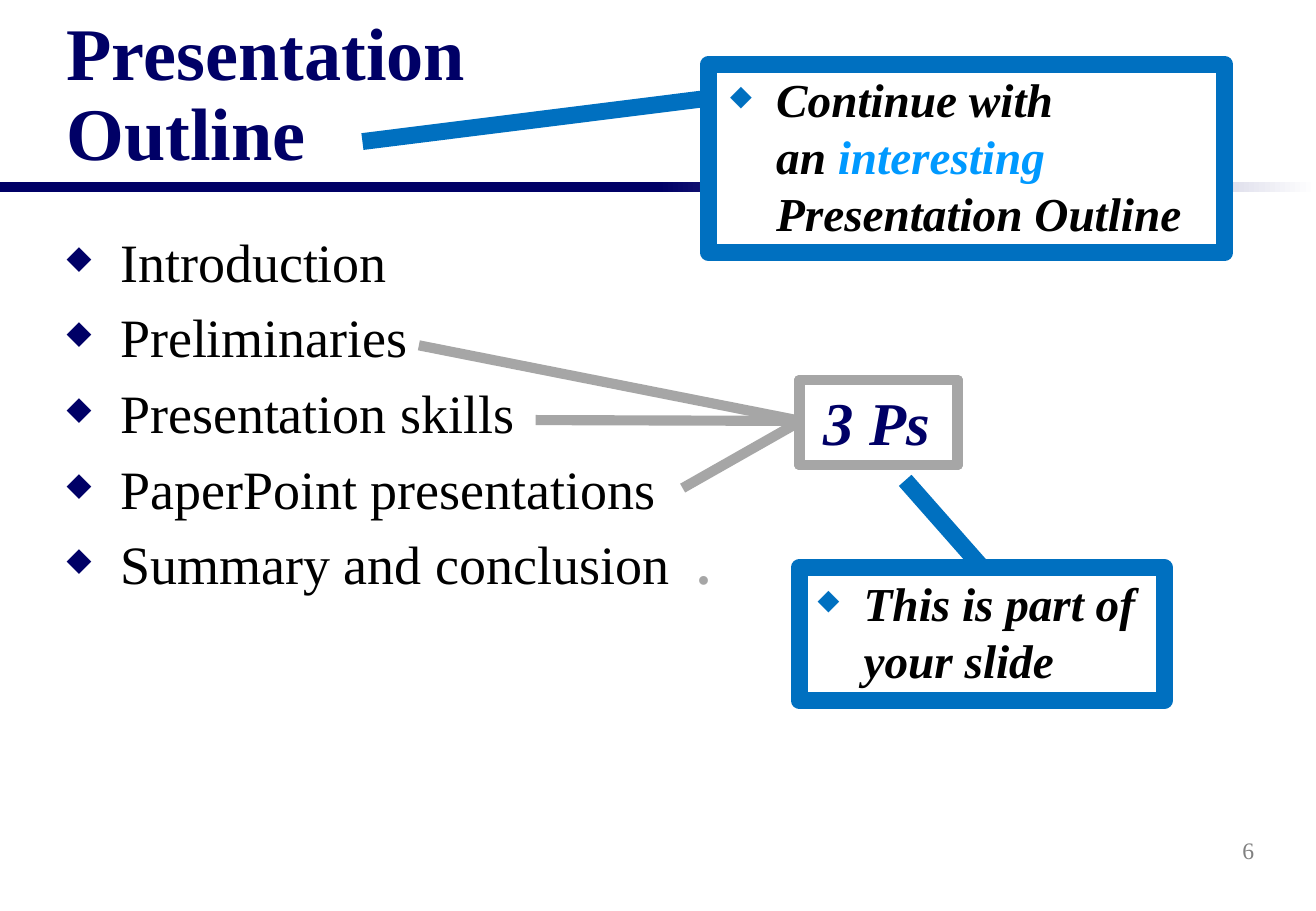
from typing import NamedTuple

from lxml import etree
from pptx import Presentation, util as u
from pptx.dml.color import RGBColor
from pptx.enum import shapes, text
from pptx.oxml import ns

PX = 9144  # EMU in one px, 100 px to the inch
FONT = "Times New Roman"
NAVY, BLUE, GREY = "000066", "0070C0", "A6A6A6"
BLACK, WHITE, SKY, NUMBER_GREY = "000000", "FFFFFF", "0099FF", "808080"


class Box(NamedTuple):
    left: int
    top: int
    width: int
    height: int


class Run(NamedTuple):
    text: str
    color: str = BLACK
    bold: bool = False


class Bullet(NamedTuple):
    color: str
    indent: int


class Callout(NamedTuple):
    box: Box
    color: str
    weight: int
    start: tuple[float, float]  # y, x as shares of the box
    end: tuple[float, float]


class Note(NamedTuple):
    callout: Callout
    box: Box
    runs: list[Run]


OUTLINE = [
    [Run("Introduction")],
    [Run("Preliminaries")],
    [Run("Presentation skills")],
    [Run("PaperPoint presentations")],
    [Run("Summary and conclusion\u00a0 "), Run(".", GREY, True)],
]
THREE_PS = Box(658, 313, 130, 70)
THREE_PS_ENDS = [(1.27, -0.74), (-0.41, -2.41), (0.47, -1.67)]
NOTES = [
    Note(
        Callout(Box(583, 53, 425, 155), BLUE, 10, (0.18, 0), (0.41, -0.67)),
        Box(591, 53, 420, 151),
        [
            Run("Continue with\nan ", BLACK, True),
            Run("interesting", SKY, True),
            Run(" Presentation Outline", BLACK, True),
        ],
    ),
    Note(
        Callout(Box(658, 467, 300, 110), BLUE, 10, (0, 0.5), (-0.65, 0.29)),
        Box(663, 468, 290, 104),
        [Run("This is part of\nyour slide", BLACK, True)],
    ),
]


def rgb(color: str) -> RGBColor:
    return RGBColor.from_string(color)


def emu(box: Box) -> list[int]:
    return [length * PX for length in box]


def add_bar(slide, box: Box, color: str, fade_to: str | None = None) -> None:
    bar = slide.shapes.add_shape(shapes.MSO_SHAPE.RECTANGLE, *emu(box))
    bar.shadow.inherit = False
    bar.line.fill.background()
    if fade_to is None:
        bar.fill.solid()
        bar.fill.fore_color.rgb = rgb(color)
        return
    bar.fill.gradient()
    bar.fill.gradient_angle = 0
    for stop, stop_color in zip(bar.fill.gradient_stops, (color, fade_to)):
        stop.color.rgb = rgb(stop_color)


def add_callout(slide, callout: Callout) -> None:
    shape = slide.shapes.add_shape(
        shapes.MSO_SHAPE.LINE_CALLOUT_1, *emu(callout.box)
    )
    shape.shadow.inherit = False
    for index, value in enumerate(callout.start + callout.end):
        shape.adjustments[index] = value
    shape.fill.solid()
    shape.fill.fore_color.rgb = rgb(WHITE)
    shape.line.color.rgb = rgb(callout.color)
    shape.line.width = u.Pt(callout.weight)


def set_bullet(paragraph, bullet: Bullet) -> None:
    properties = paragraph._p.get_or_add_pPr()
    properties.set("marL", str(bullet.indent * PX))
    properties.set("indent", str(-bullet.indent * PX))
    color = etree.SubElement(properties, ns.qn("a:buClr"))
    etree.SubElement(color, ns.qn("a:srgbClr"), val=bullet.color)
    etree.SubElement(properties, ns.qn("a:buSzPct"), val="60000")
    etree.SubElement(properties, ns.qn("a:buChar"), char="◆")


def add_text(
    slide,
    box: Box,
    paragraphs: list[list[Run]],
    *,
    size: int,
    italic: bool = False,
    bullet: Bullet | None = None,
    align: text.PP_ALIGN = text.PP_ALIGN.LEFT,
    anchor: text.MSO_ANCHOR = text.MSO_ANCHOR.TOP,
    line_spacing: float | None = None,
) -> None:
    """Write one paragraph per list of runs; a newline in a run breaks the line."""
    frame = slide.shapes.add_textbox(*emu(box)).text_frame
    frame.word_wrap = True
    frame.vertical_anchor = anchor
    for index, runs in enumerate(paragraphs):
        paragraph = frame.add_paragraph() if index else frame.paragraphs[0]
        paragraph.alignment = align
        if line_spacing:
            paragraph.line_spacing = line_spacing
        if bullet:
            paragraph.space_before = u.Pt(size * 0.2)
            set_bullet(paragraph, bullet)
        for item in runs:
            for number, line in enumerate(item.text.split("\n")):
                if number:
                    paragraph.add_line_break()
                run = paragraph.add_run()
                run.text = line
                run.font.name = FONT
                run.font.size = u.Pt(size)
                run.font.bold = item.bold
                run.font.italic = italic
                run.font.color.rgb = rgb(item.color)


def main() -> None:
    presentation = Presentation()
    presentation.slide_width = 1083 * PX
    presentation.slide_height = 750 * PX
    slide = presentation.slides.add_slide(presentation.slide_layouts[6])

    add_bar(slide, Box(0, 150, 542, 8), NAVY)
    add_bar(slide, Box(541, 150, 542, 8), NAVY, fade_to=WHITE)
    add_text(slide, Box(816, 675, 226, 50), [[Run("6", NUMBER_GREY)]], size=14,
             align=text.PP_ALIGN.RIGHT, anchor=text.MSO_ANCHOR.MIDDLE)
    add_text(slide, Box(45, 29, 988, 121),
             [[Run("Presentation\nOutline", NAVY, True)]], size=44,
             anchor=text.MSO_ANCHOR.BOTTOM, line_spacing=0.9)
    add_text(slide, Box(45, 183, 996, 58), OUTLINE, size=32,
             bullet=Bullet(NAVY, 44))

    for end in THREE_PS_ENDS:
        add_callout(slide, Callout(THREE_PS, GREY, 6, (0.48, 0.01), end))
    add_text(slide, Box(668, 312, 110, 125), [[Run("3 Ps", NAVY, True)]],
             size=36, italic=True)

    for note in NOTES:
        add_callout(slide, note.callout)
        add_text(slide, note.box, [note.runs], size=28, italic=True,
                 bullet=Bullet(BLUE, 38))

    presentation.save("out.pptx")


if __name__ == "__main__":
    main()
